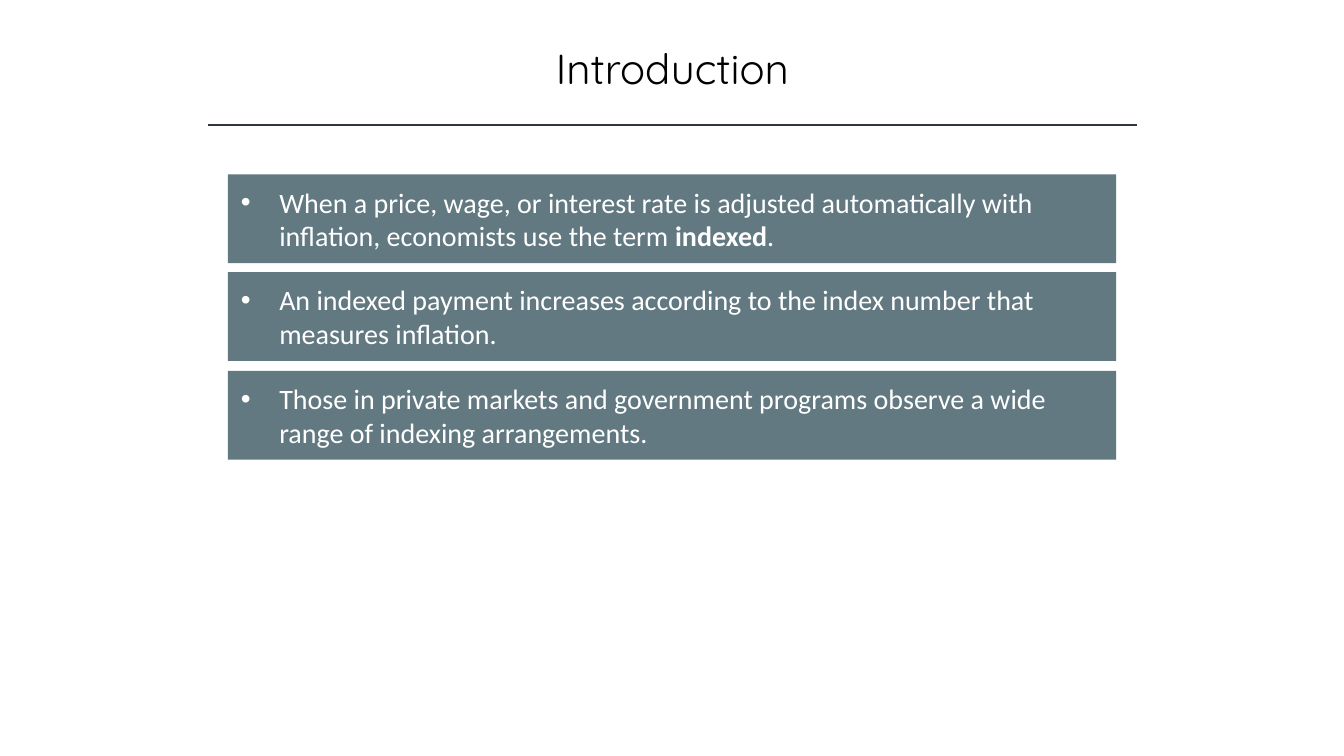
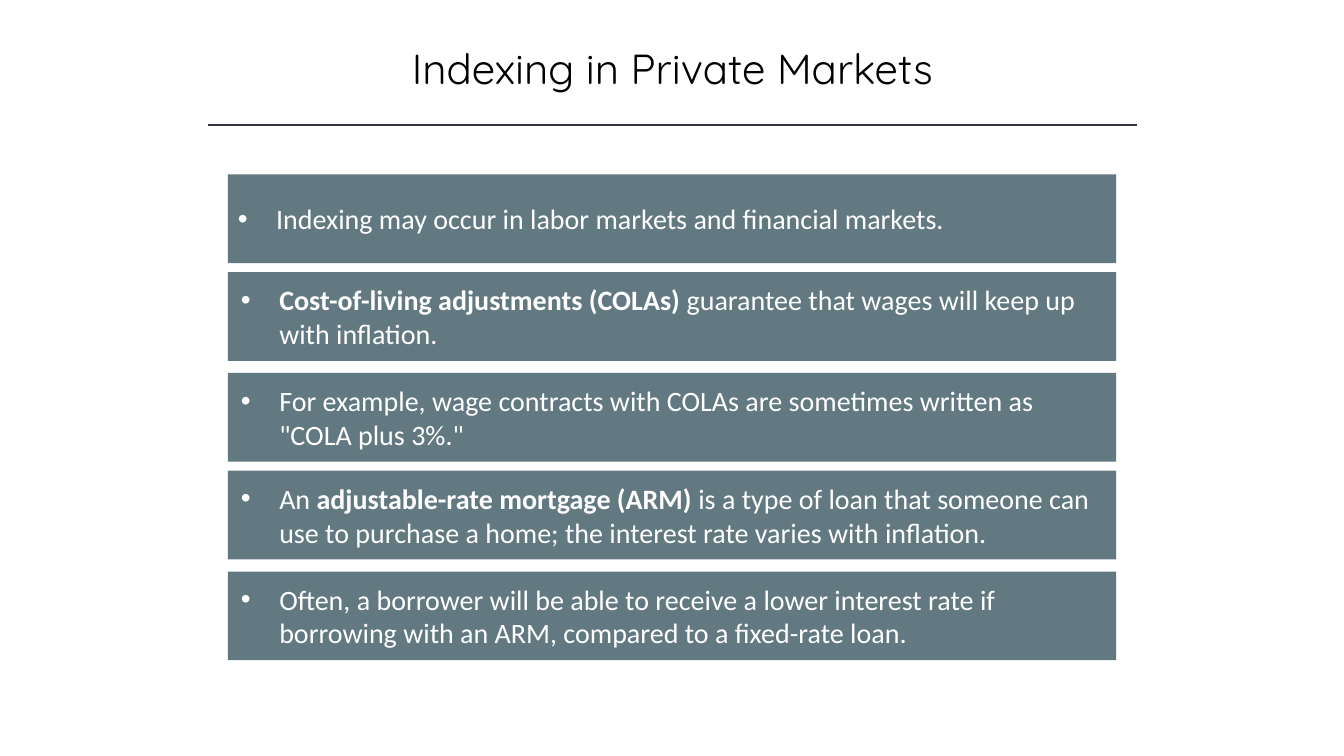
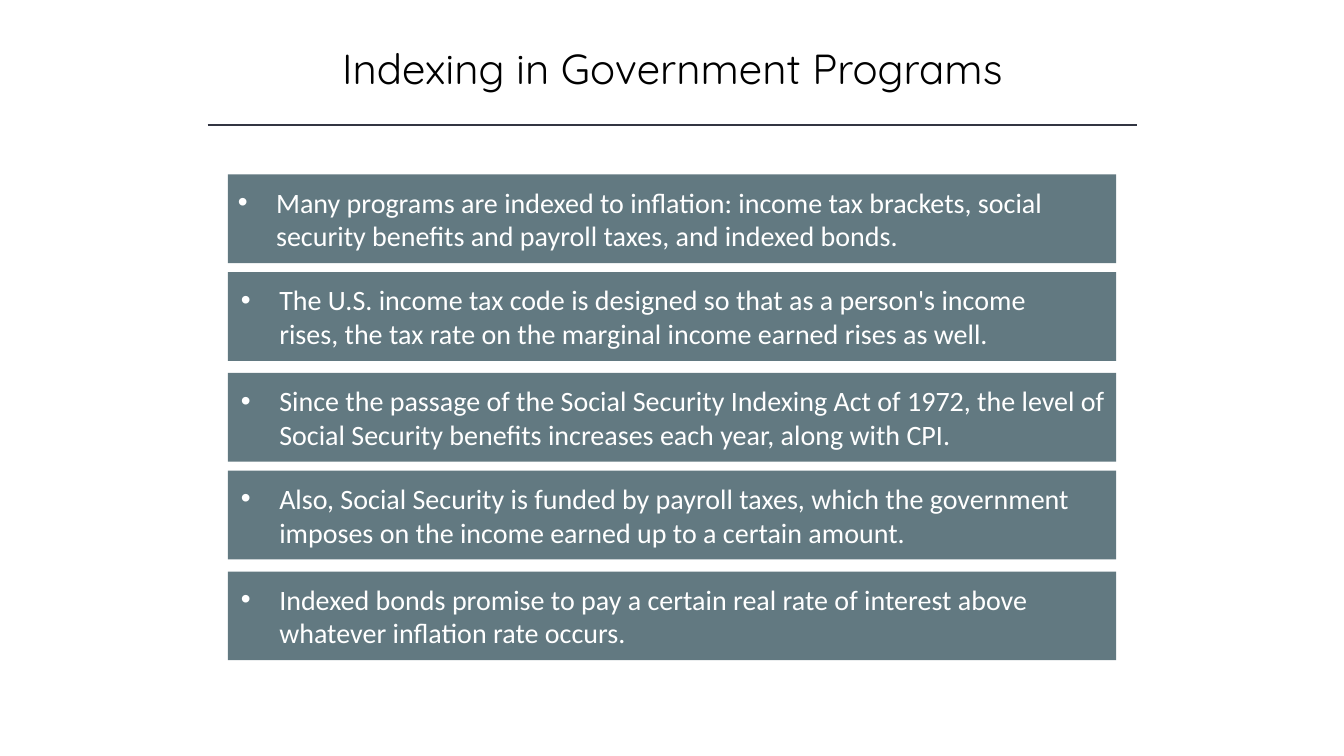
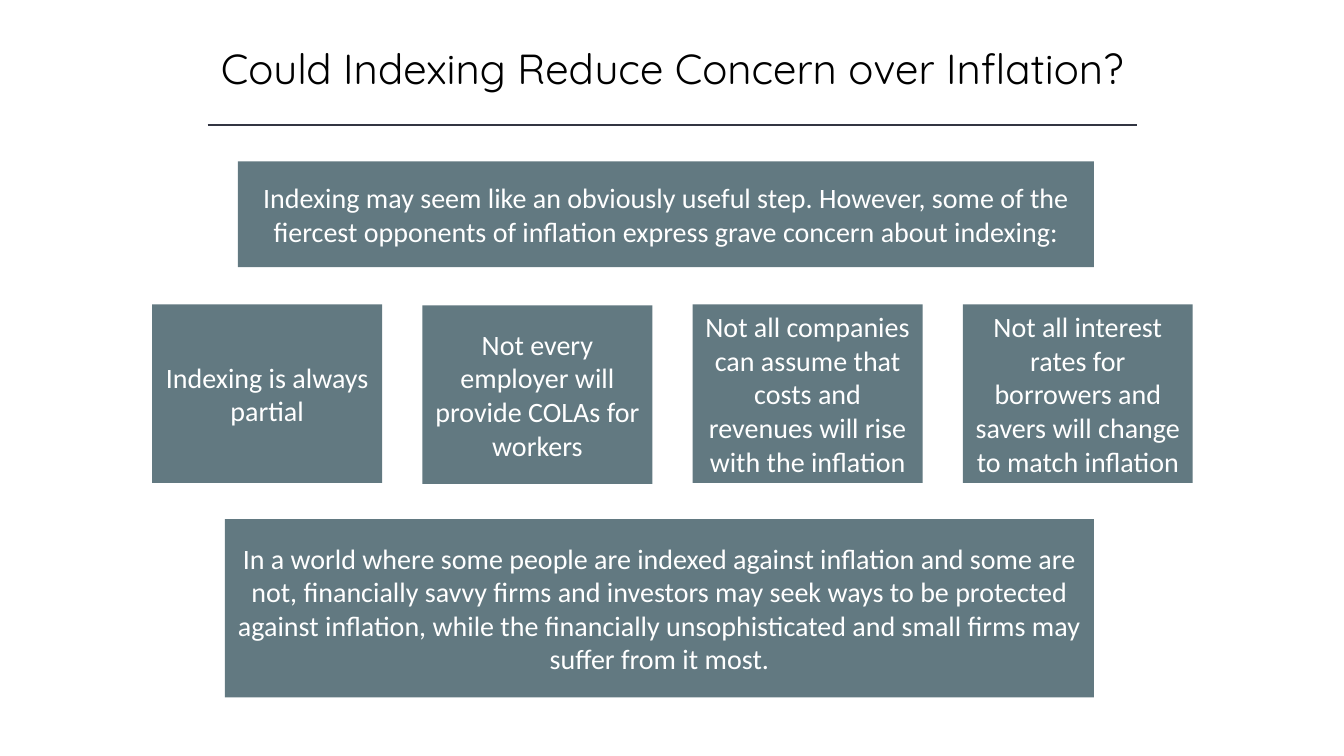
from dataclasses import dataclass

from lxml.etree import SubElement
from pptx import Presentation
from pptx.dml.color import RGBColor
from pptx.enum.shapes import MSO_CONNECTOR, MSO_SHAPE
from pptx.enum.text import MSO_ANCHOR, PP_ALIGN
from pptx.oxml.ns import qn
from pptx.presentation import Presentation as Deck
from pptx.shapes.autoshape import Shape
from pptx.slide import Slide
from pptx.text.text import _Paragraph as Paragraph
from pptx.util import Emu, Pt

PX_PER_INCH = 100
SLIDE_WIDTH, SLIDE_HEIGHT = 1333, 750

BLACK, WHITE = "000000", "FFFFFF"
RULE_COLOR, PANEL_COLOR = "323542", "627981"
TITLE_FONT, BODY_FONT = "Quicksand", "Calibri"
TITLE_SIZE, BODY_SIZE = 30, 20

BAR_LEFT, BAR_WIDTH, BAR_HEIGHT = 226, 881, 88
ROW_TOPS = (173, 270, 370, 467, 567)
BULLET_INDENT = 38
DEFAULT_INSET = 10
SHIFTED_INSET = 13
WIDE_INSET = 38
NARROW_ROWS = 2

CARD_LEFT, CARD_PITCH, CARD_WIDTH, CARD_HEIGHT = 151, 268, 228, 177


@dataclass(frozen=True)
class Run:
    text: str
    bold: bool = False


@dataclass(frozen=True)
class Bar:
    runs: tuple[Run, ...]
    left_inset: int = SHIFTED_INSET


@dataclass(frozen=True)
class BulletSlide:
    title: str
    bars: tuple[Bar, ...]
    tops: tuple[int, ...] = ROW_TOPS


@dataclass(frozen=True)
class Panel:
    left: int
    top: int
    width: int
    height: int
    text: str


BULLET_SLIDES = (
    BulletSlide(
        "Introduction",
        (
            Bar((
                Run("When a price, wage, or interest rate is adjusted automatically "
                    "with inflation, economists use the term "),
                Run("indexed", bold=True),
                Run("."),
            )),
            Bar((Run("An indexed payment increases according to the index number "
                     "that measures inflation."),)),
            Bar((Run("Those in private markets and government programs observe a "
                     "wide range of indexing arrangements."),)),
        ),
        tops=(173, 270, 368),
    ),
    BulletSlide(
        "Indexing in Private Markets",
        (
            Bar((Run("Indexing may occur in labor markets and financial markets."),),
                DEFAULT_INSET),
            Bar((
                Run("Cost-of-living adjustments (COLAs) ", bold=True),
                Run("guarantee that wages will keep up with inflation."),
            )),
            Bar((Run("For example, wage contracts with COLAs are sometimes written "
                     'as "COLA plus 3%."'),)),
            Bar((
                Run("An "),
                Run("adjustable-rate mortgage (ARM) ", bold=True),
                Run("is a type of loan that someone can use to purchase a home; "
                    "the interest rate varies with inflation."),
            )),
            Bar((Run("Often, a borrower will be able to receive a lower interest "
                     "rate if borrowing with an ARM, compared to a fixed-rate "
                     "loan."),)),
        ),
    ),
    BulletSlide(
        "Indexing in Government Programs",
        (
            Bar((Run("Many programs are indexed to inflation: income tax brackets, "
                     "social security benefits and payroll taxes, and indexed "
                     "bonds."),),
                DEFAULT_INSET),
            Bar((Run("The U.S. income tax code is designed so that as a person's "
                     "income rises, the tax rate on the marginal income earned "
                     "rises as well."),)),
            Bar((Run("Since the passage of the Social Security Indexing Act of "
                     "1972, the level of Social Security benefits increases each "
                     "year, along with CPI."),)),
            Bar((Run("Also, Social Security is funded by payroll taxes, which the "
                     "government imposes on the income earned up to a certain "
                     "amount."),)),
            Bar((Run("Indexed bonds promise to pay a certain real rate of interest "
                     "above whatever inflation rate occurs."),)),
        ),
    ),
)

CONCERNS_TITLE = "Could Indexing Reduce Concern over Inflation?"
OPENING = Panel(
    236, 160, 849, 105,
    "Indexing may seem like an obviously useful step. However, some of the "
    "fiercest opponents of inflation express grave concern about indexing:",
)
CONCERNS = (
    (302, "Indexing is always partial"),
    (303, "Not every employer will provide COLAs for workers"),
    (302, "Not all companies can assume that costs and revenues will rise with "
          "the inflation"),
    (302, "Not all interest rates for borrowers and savers will change to match "
          "inflation"),
)
CONCLUSION = Panel(
    223, 515, 862, 177,
    "In a world where some people are indexed against inflation and some are "
    "not, financially savvy firms and investors may seek ways to be protected "
    "against inflation, while the financially unsophisticated and small firms "
    "may suffer from it most.",
)


def px(length: int) -> Emu:
    return Emu(length * 914400 // PX_PER_INCH)


def color(value: str) -> RGBColor:
    return RGBColor.from_string(value)


def add_run(paragraph: Paragraph, run: Run, font_name: str, size: int,
            font_color: str) -> None:
    text_run = paragraph.add_run()
    text_run.text = run.text
    font = text_run.font
    font.name = font_name
    font.size = Pt(size)
    font.bold = run.bold
    font.color.rgb = color(font_color)


def add_title(slide: Slide, title: str) -> None:
    """Write the centred title and draw the rule below it."""
    box = slide.shapes.add_textbox(px(167), px(37), px(1000), px(61))
    box.text_frame.word_wrap = True
    paragraph = box.text_frame.paragraphs[0]
    paragraph.alignment = PP_ALIGN.CENTER
    add_run(paragraph, Run(title), TITLE_FONT, TITLE_SIZE, BLACK)

    rule = slide.shapes.add_connector(
        MSO_CONNECTOR.STRAIGHT, px(206), px(124), px(1128), px(124))
    rule.line.color.rgb = color(RULE_COLOR)
    rule.line.width = Pt(1)
    SubElement(rule._element.spPr, qn("a:effectLst"))


def add_rectangle(slide: Slide, left: int, top: int, width: int,
                  height: int) -> Shape:
    shape = slide.shapes.add_shape(
        MSO_SHAPE.RECTANGLE, px(left), px(top), px(width), px(height))
    shape.shadow.inherit = False
    shape.fill.solid()
    shape.fill.fore_color.rgb = color(PANEL_COLOR)
    shape.line.fill.background()
    shape.text_frame.word_wrap = True
    shape.text_frame.vertical_anchor = MSO_ANCHOR.MIDDLE
    return shape


def set_bullet(paragraph: Paragraph) -> None:
    properties = paragraph._p.get_or_add_pPr()
    properties.set("marL", str(px(BULLET_INDENT)))
    properties.set("indent", str(-px(BULLET_INDENT)))
    SubElement(properties, qn("a:buFont"), typeface="Arial")
    SubElement(properties, qn("a:buChar"), char="•")


def add_bar(slide: Slide, bar: Bar, top: int, right_inset: int) -> None:
    shape = add_rectangle(slide, BAR_LEFT, top, BAR_WIDTH, BAR_HEIGHT)
    frame = shape.text_frame
    frame.margin_left = px(bar.left_inset)
    frame.margin_right = px(right_inset)
    paragraph = frame.paragraphs[0]
    paragraph.alignment = PP_ALIGN.LEFT
    set_bullet(paragraph)
    for run in bar.runs:
        add_run(paragraph, run, BODY_FONT, BODY_SIZE, WHITE)


def add_panel(slide: Slide, panel: Panel) -> None:
    shape = add_rectangle(slide, panel.left, panel.top, panel.width, panel.height)
    paragraph = shape.text_frame.paragraphs[0]
    paragraph.alignment = PP_ALIGN.CENTER
    add_run(paragraph, Run(panel.text), BODY_FONT, BODY_SIZE, WHITE)


def add_titled_slide(presentation: Deck, title: str) -> Slide:
    slide = presentation.slides.add_slide(presentation.slide_layouts[6])
    add_title(slide, title)
    return slide


def build_bullet_slide(presentation: Deck, content: BulletSlide) -> None:
    slide = add_titled_slide(presentation, content.title)
    for row, (top, bar) in enumerate(zip(content.tops, content.bars)):
        right_inset = WIDE_INSET if row < NARROW_ROWS else DEFAULT_INSET
        add_bar(slide, bar, top, right_inset)


def build_concerns_slide(presentation: Deck) -> None:
    slide = add_titled_slide(presentation, CONCERNS_TITLE)
    add_panel(slide, OPENING)
    for column, (top, text) in enumerate(CONCERNS):
        left = CARD_LEFT + column * CARD_PITCH
        add_panel(slide, Panel(left, top, CARD_WIDTH, CARD_HEIGHT, text))
    add_panel(slide, CONCLUSION)


def main() -> None:
    presentation = Presentation()
    presentation.slide_width = px(SLIDE_WIDTH)
    presentation.slide_height = px(SLIDE_HEIGHT)
    for content in BULLET_SLIDES:
        build_bullet_slide(presentation, content)
    build_concerns_slide(presentation)
    presentation.save("out.pptx")


if __name__ == "__main__":
    main()
